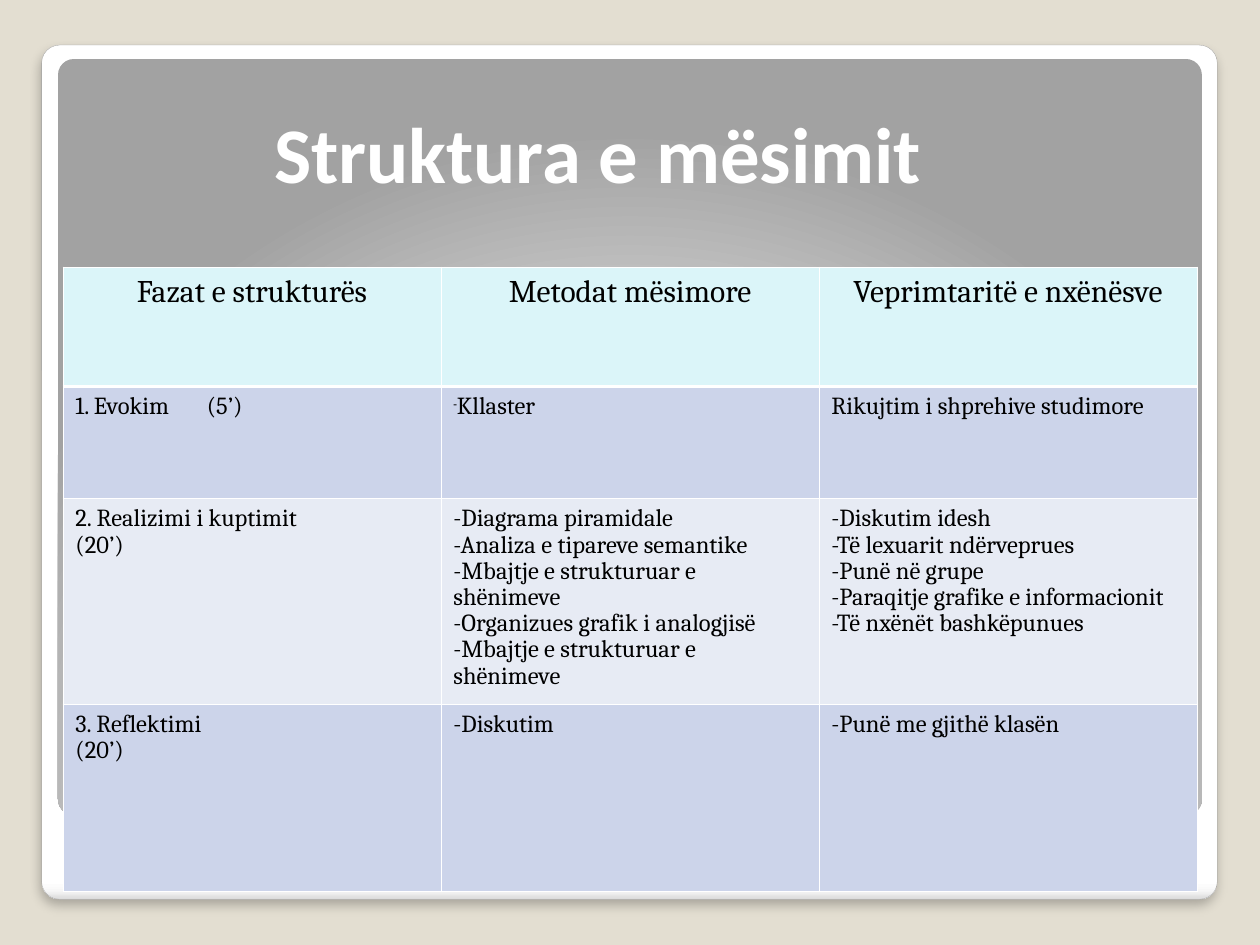
import pptx
import pptx.dml.color
import pptx.enum.shapes
import pptx.enum.text
import pptx.oxml
import pptx.oxml.ns
import pptx.util
from lxml import etree
from pptx.util import Cm

NS = 'xmlns:a="http://schemas.openxmlformats.org/drawingml/2006/main"'


def rgb(value):
    return pptx.dml.color.RGBColor.from_string(value)


def xml(text):
    """Parse one drawing element, adding the namespace to its first tag."""
    tag = text[1:].split(">")[0].split(" ")[0].rstrip("/")
    return pptx.oxml.parse_xml(text.replace(tag, f"{tag} {NS}", 1))


class Deck:
    heading_font, body_font = "Calibri", "Cambria"
    white, black = "FFFFFF", "000000"
    line_spacing = 0.93

    def __init__(self, background):
        self.prs = pptx.Presentation()
        self.prs.slide_width, self.prs.slide_height = Cm(25.4), Cm(19.05)
        self.s = self.prs.slides.add_slide(self.prs.slide_layouts[6])
        self.s.background.fill.solid()
        self.s.background.fill.fore_color.rgb = rgb(background)

    def panel(self, box, stops, direction, line=None):
        """Rounded panel with a gradient of (percent, colour) stops."""
        sp = self.s.shapes.add_shape(
            pptx.enum.shapes.MSO_SHAPE.ROUNDED_RECTANGLE, *map(Cm, box))
        sp.adjustments[0] = 0.021
        sp.shadow.inherit = False
        gs = "".join(f'<a:gs pos="{pos * 1000}"><a:srgbClr val="{c}"/></a:gs>'
                     for pos, c in stops)
        geometry = sp._element.spPr.find(pptx.oxml.ns.qn("a:prstGeom"))
        geometry.addnext(xml(f"<a:gradFill><a:gsLst>{gs}</a:gsLst>{direction}</a:gradFill>"))
        if line:
            sp.line.color.rgb = rgb(line)
            sp.line.width = pptx.util.Pt(0.16)
        else:
            sp.line.fill.background()
        return sp

    def shadow(self, sp, alpha, blur, dist):
        effects = sp._element.spPr.find(pptx.oxml.ns.qn("a:effectLst"))
        effects.append(xml(
            f'<a:outerShdw blurRad="{pptx.util.Pt(blur)}" dist="{pptx.util.Pt(dist)}" '
            f'dir="5400000" algn="t" rotWithShape="0"><a:srgbClr val="{self.black}">'
            f'<a:alpha val="{alpha * 1000}"/></a:srgbClr></a:outerShdw>'))

    def font(self, p, name, size, color, bold=False):
        p.font.name, p.font.size, p.font.bold = name, pptx.util.Pt(size), bold
        p.font.color.rgb = rgb(color)

    def title(self, text, box, indent):
        tf = self.s.shapes.add_textbox(*map(Cm, box)).text_frame
        tf.word_wrap = True
        tf.vertical_anchor = pptx.enum.text.MSO_ANCHOR.BOTTOM
        tf.margin_bottom = 0
        p = tf.paragraphs[0]
        p.text = text
        p._p.get_or_add_pPr().set("marL", str(Cm(indent)))
        self.font(p, self.heading_font, 45, self.white, True)

    def bullet(self, p):
        spacing = p._p.pPr.find(pptx.oxml.ns.qn("a:lnSpc"))
        for text in ('<a:buChar char="-"/>', '<a:buSzPct val="45000"/>',
                     f'<a:buClr><a:srgbClr val="{self.black}"/></a:buClr>'):
            spacing.addnext(xml(text))

    def borders(self, cell, widths):
        tc_pr = cell._tc.get_or_add_tcPr()
        for i, (side, width) in enumerate(zip("LRTB", widths)):
            tc_pr.insert(i, xml(
                f'<a:ln{side} w="{pptx.util.Pt(width)}"><a:solidFill>'
                f'<a:srgbClr val="{self.white}"/></a:solidFill></a:ln{side}>'))

    def cell(self, cell, text, fill, size, top, align=None):
        cell.fill.solid()
        cell.fill.fore_color.rgb = rgb(fill)
        cell.margin_left = cell.margin_right = Cm(0.25)
        cell.margin_top, cell.margin_bottom = Cm(top), Cm(0.13)
        cell.text = text
        for p in cell.text_frame.paragraphs:
            p.line_spacing = self.line_spacing
            p.alignment = align
            self.font(p, self.body_font, size, self.black)

    def table(self, rows, left, top, col_width, heights, fills):
        n = len(rows[0])
        table = self.s.shapes.add_table(
            len(rows), n, Cm(left), Cm(top), Cm(col_width * n), Cm(sum(heights))).table
        table.first_row = table.horz_banding = False
        thin, thick = 0.45, 1.47
        for r, (texts, height, fill) in enumerate(zip(rows, heights, fills)):
            table.rows[r].height = Cm(height)
            for c, text in enumerate(texts):
                cell = table.cell(r, c)
                if r == 0:
                    self.cell(cell, text, fill, 18, 0.18, pptx.enum.text.PP_ALIGN.CENTER)
                else:
                    self.cell(cell, text, fill, 14, 0.15)
                self.borders(cell, (thin, thin, thick if r == 1 else thin,
                                    thick if r == 0 else thin))
        for column in table.columns:
            column.width = Cm(col_width)
        return table


def main():
    deck = Deck("E3DED1")

    # Frame and inner panel
    frame = deck.panel((0.84, 0.91, 23.7, 17.22),
                       [(0, "FFFFFF"), (98, "FFFFFF"), (99, "F7F7F7"), (100, "DADADA")],
                       '<a:lin ang="5400000" scaled="0"/>', "A4A4A4")
    deck.shadow(frame, 25, 6, 4)
    deck.panel((1.17, 1.19, 23.06, 15.24),
               [(0, "FFFFFF"), (55, "E1E1E1"), (100, "A2A2A2")],
               '<a:path path="circle"><a:fillToRect l="50000" t="175000" '
               'r="50000" b="-75000"/></a:path>')

    # Title
    deck.title("Struktura e mësimit", (1.27, 1.96, 22.86, 2.06), 4.01)

    # Lesson table
    rows = [
        ("Fazat e strukturës", "Metodat mësimore", "Veprimtaritë e nxënësve"),
        ("1. Evokim\t (5’)", "Kllaster", "Rikujtim i shprehive studimore"),
        ("2. Realizimi i kuptimit\n(20’)",
         "-Diagrama piramidale\n-Analiza e tipareve semantike\n"
         "-Mbajtje e strukturuar e shënimeve\n-Organizues grafik i analogjisë\n"
         "-Mbajtje e strukturuar e shënimeve",
         "-Diskutim idesh\n-Të lexuarit ndërveprues\n-Punë në grupe\n"
         "-Paraqitje grafike e informacionit\n-Të nxënët bashkëpunues"),
        ("3. Reflektimi\n(20’)", "-Diskutim", "-Punë me gjithë klasën"),
    ]
    table = deck.table(rows, 1.27, 5.38, 7.62, (2.41, 2.26, 4.14, 3.78),
                       ("DBF5F9", "CCD4EA", "E7EBF4", "CCD4EA"))
    deck.bullet(table.cell(1, 1).text_frame.paragraphs[0])

    deck.prs.save("out.pptx")


if __name__ == "__main__":
    main()
